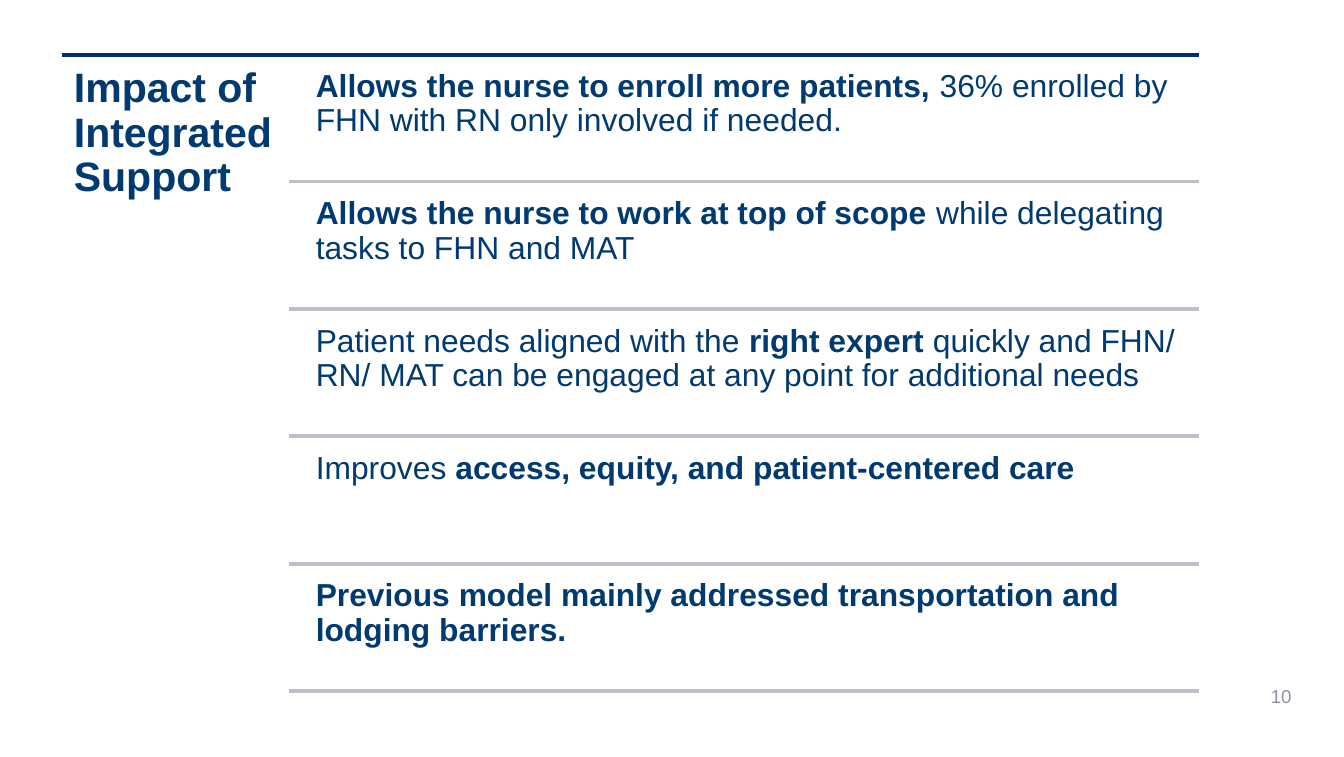
from pptx import Presentation
from pptx import util as u
from pptx.dml.color import RGBColor
from pptx.enum import shapes, text
from pptx.oxml.ns import qn
from lxml import etree

COLORS = {"rule": "002D72", "text": "003A70", "divider": "BDBEC9", "number": "8C91A4"}
IMPACTS = [
    [("Allows the nurse to enroll more patients, ", True),
     ("36% enrolled by FHN with RN only involved if needed.", False)],
    [("Allows the nurse to work at top of scope ", True),
     ("while delegating tasks to FHN and MAT", False)],
    [("Patient needs aligned with the ", False),
     ("right expert ", True),
     ("quickly and FHN/ RN/ MAT can be engaged at any point for additional needs", False)],
    [("Improves ", False),
     ("access, equity, and patient-centered care", True)],
    [("Previous model mainly addressed transportation and lodging barriers.", True)],
]
LEFT, RIGHT, TOP = 0.46, 8.92, 0.41
DIVIDER_LEFT, TEXT_LEFT = 2.15, 2.28
FIRST_TEXT, FIRST_DIVIDER, LAST_DIVIDER = 0.45, 1.35, 5.14
ROW_HEIGHT = 0.9
PITCH = (LAST_DIVIDER - FIRST_DIVIDER) / (len(IMPACTS) - 1)

prs = Presentation()
prs.slide_width, prs.slide_height = u.Inches(10), u.Inches(5.63)
s = prs.slides.add_slide(prs.slide_layouts[5])


def add_rule(left, y, color):
    c = s.shapes.add_connector(shapes.MSO_CONNECTOR.STRAIGHT, u.Inches(left), u.Inches(y),
                               u.Inches(RIGHT), u.Inches(y))
    c.line.color.rgb = RGBColor.from_string(COLORS[color])
    c.line.width = u.Pt(2)
    etree.SubElement(c._element.spPr, qn("a:effectLst"))


def format_box(sp, runs, size, color, inset, spacing=0.9, align=text.PP_ALIGN.LEFT,
               anchor=text.MSO_ANCHOR.TOP):
    tf = sp.text_frame
    tf.word_wrap = True
    tf.auto_size = text.MSO_AUTO_SIZE.NONE
    tf.vertical_anchor = anchor
    tf.margin_left = tf.margin_right = tf.margin_top = tf.margin_bottom = u.Inches(inset)
    p = tf.paragraphs[0]
    p.alignment = align
    p.line_spacing = spacing
    p.space_before = u.Pt(0)
    p.space_after = u.Pt(6)
    for words, bold in runs:
        r = p.add_run()
        r.text = words
        r.font.name = "Arial"
        r.font.size = u.Pt(size)
        r.font.bold = bold
        r.font.color.rgb = RGBColor.from_string(COLORS[color])


add_rule(LEFT, TOP, "rule")

title = s.shapes.title
title.left, title.top = u.Inches(LEFT), u.Inches(TOP)
title.width, title.height = u.Inches(DIVIDER_LEFT - LEFT), u.Inches(4.78)
format_box(title, [("Impact of Integrated Support", True)], 22, "text", 0.09)

for i, runs in enumerate(IMPACTS):
    sp = s.shapes.add_textbox(u.Inches(TEXT_LEFT), u.Inches(FIRST_TEXT + i * PITCH),
                              u.Inches(RIGHT - TEXT_LEFT), u.Inches(ROW_HEIGHT))
    format_box(sp, runs, 17, "text", 0.07)
    add_rule(DIVIDER_LEFT, FIRST_DIVIDER + i * PITCH, "divider")

number = s.shapes.add_textbox(u.Inches(7.37), u.Inches(5.03), u.Inches(2.33), u.Inches(0.3))
format_box(number, [("10", False)], 10, "number", 0.09, 1.0,
           text.PP_ALIGN.RIGHT, text.MSO_ANCHOR.MIDDLE)

prs.save("out.pptx")
